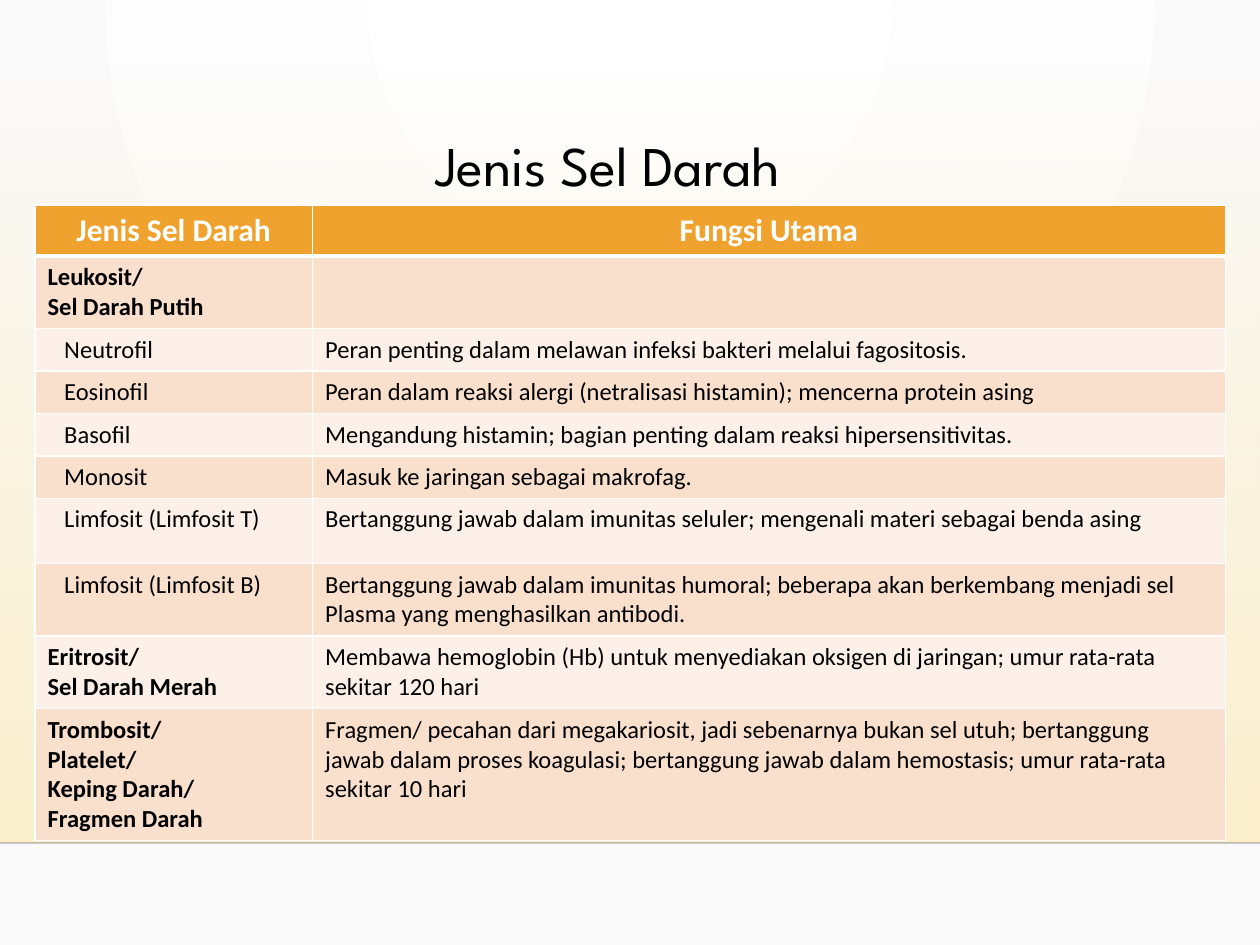
"""Build a slide that tabulates the blood cell types and their main functions."""
from dataclasses import dataclass

from pptx import Presentation
from pptx.dml.color import RGBColor as Rgb
from pptx.enum.shapes import MSO_CONNECTOR as Connector, MSO_SHAPE as Shape
from pptx.enum.text import MSO_ANCHOR as Anchor, PP_ALIGN as Align
from pptx.oxml.ns import qn
from pptx.oxml.xmlchemy import OxmlElement as Element
from pptx.util import Pt


@dataclass(frozen=True)
class Theme:
    title_font: str = "League Spartan"
    body_font: str = "Calibri"
    title_size: int = 32
    header_size: int = 18
    body_size: int = 14
    ink: str = "000000"
    white: str = "FFFFFF"
    backdrop: str = "FAFAFA"
    glow_top: str = "FBEEC9"
    glow_bottom: str = "FBEFCC"
    rule: str = "000001"
    header: str = "F0A22E"
    bands: tuple = ("F9E0CD", "FCF0E8")


HEADER = ("Jenis Sel Darah", "Fungsi Utama")
CELL_TYPES = [
    ("Leukosit/\nSel Darah Putih", "", 41.5),
    ("Neutrofil", "Peran penting dalam melawan infeksi bakteri melalui fagositosis.", 24.2),
    ("Eosinofil", "Peran dalam reaksi alergi (netralisasi histamin); mencerna protein asing", 24.2),
    ("Basofil", "Mengandung histamin; bagian penting dalam reaksi hipersensitivitas.", 24.2),
    ("Monosit", "Masuk ke jaringan sebagai makrofag.", 24.2),
    ("Limfosit (Limfosit T)",
     "Bertanggung jawab dalam imunitas seluler; mengenali materi sebagai benda asing", 37.2),
    ("Limfosit (Limfosit B)",
     "Bertanggung jawab dalam imunitas humoral; beberapa akan berkembang menjadi sel "
     "Plasma yang menghasilkan antibodi.", 41.5),
    ("Eritrosit/\nSel Darah Merah",
     "Membawa hemoglobin (Hb) untuk menyediakan oksigen di jaringan; umur rata-rata "
     "sekitar 120 hari", 41.5),
    ("Trombosit/\nPlatelet/\nKeping Darah/\nFragmen Darah",
     "Fragmen/ pecahan dari megakariosit, jadi sebenarnya bukan sel utuh; bertanggung "
     "jawab dalam proses koagulasi; bertanggung jawab dalam hemostasis; umur rata-rata "
     "sekitar 10 hari", 75),
]


def add_child(parent, tag, **attributes):
    child = Element(tag)
    for name, value in attributes.items():
        child.set(name, str(value))
    parent.append(child)
    return child


class SlideBuilder:
    def __init__(self, slide, theme):
        self.slide = slide
        self.theme = theme

    def color_stops(self, fill, *colors):
        fill.gradient()
        for stop, color in zip(fill.gradient_stops, colors):
            stop.color.rgb = Rgb.from_string(color)

    def set_alpha(self, element, percent):
        add_child(next(element.iter(qn("a:srgbClr"))), "a:alpha", val=percent * 1000)

    def background(self):
        self.color_stops(self.slide.background.fill, self.theme.white, self.theme.backdrop)
        gradient = next(self.slide.element.iter(qn("a:gradFill")))
        gradient.remove(gradient.find(qn("a:lin")))
        circle = add_child(gradient, "a:path", path="circle")
        add_child(circle, "a:fillToRect", l=43000, t=0, r=43000, b=100000)

    def glow(self, left, top, width, height):
        panel = self.slide.shapes.add_shape(
            Shape.RECTANGLE, Pt(left), Pt(top), Pt(width), Pt(height))
        panel.shadow.inherit = False
        panel.line.fill.background()
        self.color_stops(panel.fill, self.theme.glow_top, self.theme.glow_bottom)
        panel.fill.gradient_angle = 270
        self.set_alpha(panel.element.spPr, 0)

    def rule(self, left, top, right):
        line = self.slide.shapes.add_connector(
            Connector.STRAIGHT, Pt(left), Pt(top), Pt(right), Pt(top))
        line.line.width = Pt(1)
        line.line.color.rgb = Rgb.from_string(self.theme.rule)
        properties = line.element.spPr
        self.set_alpha(properties, 20)
        add_child(properties, "a:effectLst")

    def style_para(self, para, font, size, color, bold=False, align=Align.LEFT):
        para.alignment = align
        for span in para.runs:
            span.font.name = font
            span.font.size = Pt(size)
            span.font.bold = bold
            span.font.color.rgb = Rgb.from_string(color)

    def title(self, text, left, top, width, height):
        box = self.slide.shapes.add_textbox(Pt(left), Pt(top), Pt(width), Pt(height))
        frame = box.text_frame
        frame.word_wrap = True
        frame.vertical_anchor = Anchor.TOP
        frame.text = text
        para = frame.paragraphs[0]
        para.line_spacing = 0.9
        self.style_para(para, self.theme.title_font, self.theme.title_size,
                        self.theme.ink, align=Align.CENTER)

    def borders(self, cell, top, bottom):
        properties = cell._tc.get_or_add_tcPr()
        widths = {"a:lnL": 1, "a:lnR": 1, "a:lnT": top, "a:lnB": bottom}
        for position, (tag, width) in enumerate(widths.items()):
            edge = Element(tag)
            edge.set("w", str(Pt(width)))
            fill = add_child(edge, "a:solidFill")
            add_child(fill, "a:srgbClr", val=self.theme.white)
            properties.insert(position, edge)

    def cell(self, cell, text, fill, size, color, bold, align=Align.LEFT,
             indent=0, top=1, bottom=1):
        cell.fill.solid()
        cell.fill.fore_color.rgb = Rgb.from_string(fill)
        cell.text = text
        for para in cell.text_frame.paragraphs:
            self.style_para(para, self.theme.body_font, size, color, bold, align)
        cell.margin_left = Pt(7.2 + indent)
        self.borders(cell, top, bottom)

    def table(self, header, entries, left, top, widths, header_height):
        heights = [header_height] + [height for *_, height in entries]
        table = self.slide.shapes.add_table(
            len(heights), len(widths), Pt(left), Pt(top),
            Pt(sum(widths)), Pt(sum(heights))).table
        for column, width in zip(table.columns, widths):
            column.width = Pt(width)
        for row, height in zip(table.rows, heights):
            row.height = Pt(height)
        theme = self.theme
        for column, text in enumerate(header):
            self.cell(table.cell(0, column), text, theme.header, theme.header_size,
                      theme.white, True, Align.CENTER, bottom=3)
        for row, (name, function, _) in enumerate(entries, start=1):
            band = theme.bands[(row - 1) % 2]
            is_group = "\n" in name
            edge = 3 if row == 1 else 1
            self.cell(table.cell(row, 0), name, band, theme.body_size, theme.ink,
                      is_group, indent=0 if is_group else 9.5, top=edge)
            self.cell(table.cell(row, 1), function, band, theme.body_size, theme.ink,
                      False, top=edge)


def main():
    deck = Presentation()
    deck.slide_width, deck.slide_height = Pt(720), Pt(540)
    page = SlideBuilder(deck.slides.add_slide(deck.slide_layouts[6]), Theme())
    page.background()
    page.glow(0, 36.7, 720, 445)
    page.rule(0, 481.7, 720)
    page.table(HEADER, CELL_TYPES, 20, 117, (158.6, 521.6), 28)
    page.title("Jenis Sel Darah", 88.6, 75.6, 517.7, 82.8)
    deck.save("out.pptx")


if __name__ == "__main__":
    main()
